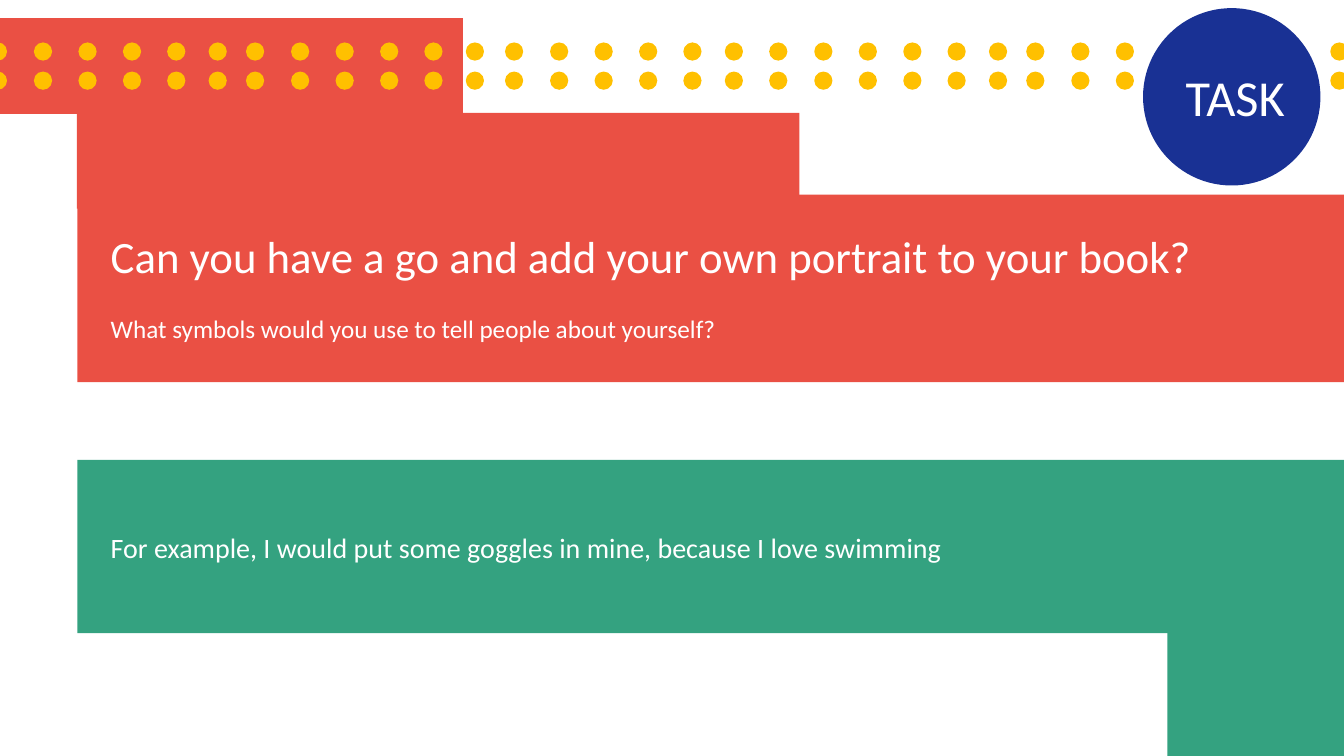
from dataclasses import dataclass

from pptx import Presentation
from pptx.dml.color import RGBColor
from pptx.enum.shapes import MSO_SHAPE as Preset
from pptx.enum.text import PP_ALIGN as Align
from pptx.slide import Slide
from pptx.text.text import TextFrame
from pptx.util import Pt

COLOURS = {
    "red": "EA5044",
    "green": "34A280",
    "blue": "193194",
    "yellow": "FFC000",
    "white": "FFFFFF",
}
FONT = "Calibri"


@dataclass(frozen=True)
class Block:
    left: float
    top: float
    width: float
    height: float
    colour: str
    preset: Preset = Preset.RECTANGLE


BANNERS = [
    Block(55.2, 328.4, 904.8, 123.8, "green"),
    Block(833.8, 416.2, 126.2, 123.8, "green"),
    Block(55.2, 139, 904.8, 133.9, "red"),
    Block(55, 80.7, 516, 68.4, "red"),
    Block(0, 13, 330.7, 68.4, "red"),
]
BADGE = Block(816.5, 5.8, 126.7, 126.7, "blue", Preset.OVAL)

DOT_SIZE = 13
DOT_ROWS = [30.3, 51.1]
DOT_GROUPS = [-8, 175.7, 360.7, 549.4, 733, 918]
DOT_OFFSETS = [0, 32.2, 64, 95.8, 127.4, 157]


def draw_block(page: Slide, block: Block) -> None:
    shape = page.shapes.add_shape(
        block.preset, Pt(block.left), Pt(block.top), Pt(block.width), Pt(block.height)
    )
    shape.shadow.inherit = False
    shape.fill.solid()
    shape.fill.fore_color.rgb = RGBColor.from_string(COLOURS[block.colour])
    shape.line.fill.background()


def draw_dots(page: Slide) -> None:
    columns = [group + offset for group in DOT_GROUPS for offset in DOT_OFFSETS]
    for top in DOT_ROWS:
        for left in columns:
            behind_badge = BADGE.left < left < BADGE.left + BADGE.width - DOT_SIZE
            if left < 960 and not behind_badge:
                draw_block(
                    page, Block(left, top, DOT_SIZE, DOT_SIZE, "yellow", Preset.OVAL)
                )


def add_box(
    page: Slide, left: float, top: float, width: float, height: float
) -> TextFrame:
    frame = page.shapes.add_textbox(
        Pt(left), Pt(top), Pt(width), Pt(height)
    ).text_frame
    frame.word_wrap = True
    return frame


def write(
    frame: TextFrame,
    text: str,
    *,
    size: float,
    align: Align = Align.LEFT,
    before: float = 0,
) -> None:
    first = frame.paragraphs[0]
    para = frame.add_paragraph() if first.runs else first
    para.alignment = align
    para.space_before = Pt(before)
    span = para.add_run()
    span.text = text
    span.font.name = FONT
    span.font.size = Pt(size)
    span.font.color.rgb = RGBColor.from_string(COLOURS["white"])


def main() -> None:
    deck = Presentation()
    deck.slide_width, deck.slide_height = Pt(960), Pt(540)
    page = deck.slides.add_slide(deck.slide_layouts[6])

    for banner in BANNERS:
        draw_block(page, banner)
    draw_dots(page)
    draw_block(page, BADGE)

    badge_label = add_box(page, 817.2, 43.9, 130.3, 51.1)
    write(badge_label, "TASK", size=36, align=Align.CENTER)

    task = add_box(page, 72, 159.8, 904, 90)
    write(
        task, "Can you have a go and add your own portrait to your book?", size=32
    )
    write(
        task,
        "What symbols would you use to tell people about yourself?",
        size=18,
        before=22,
    )

    example = add_box(page, 72, 375.1, 786.2, 53.3)
    write(
        example,
        "For example, I would put some goggles in mine, because I love swimming",
        size=20,
    )

    deck.save("out.pptx")


if __name__ == "__main__":
    main()
